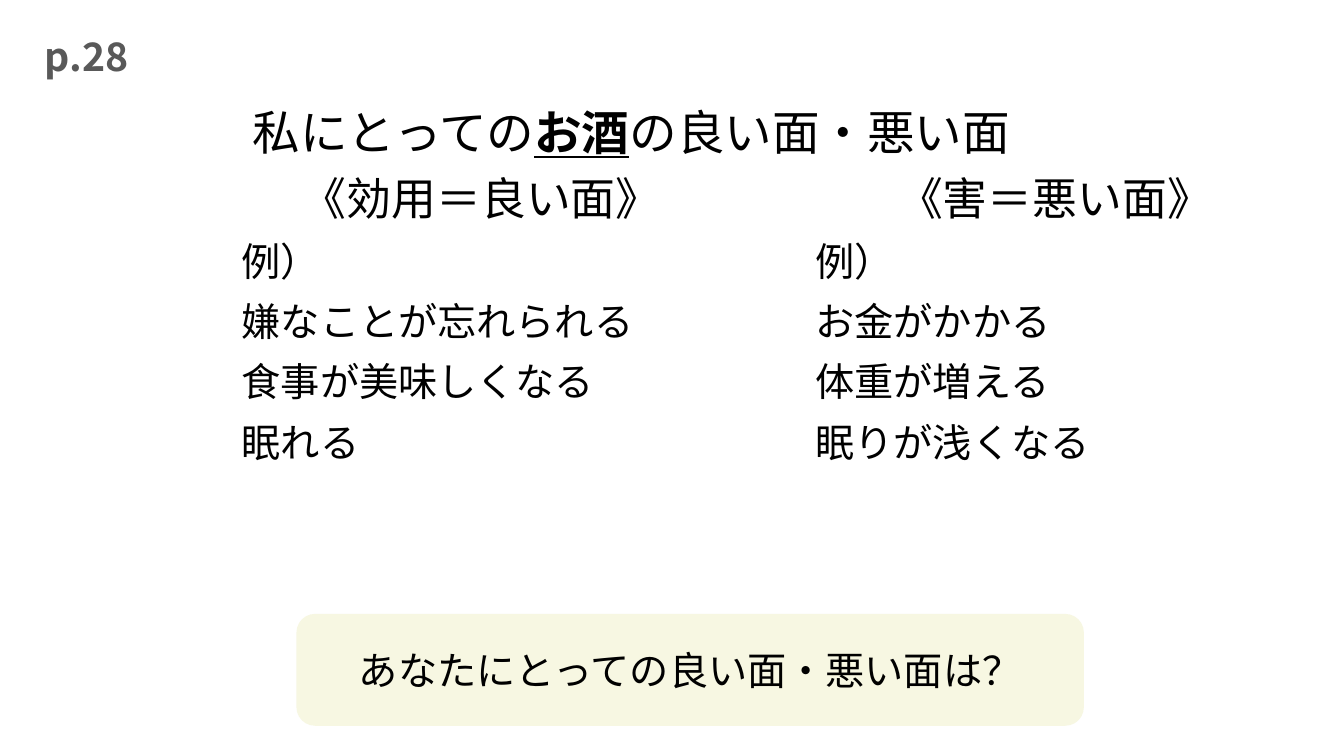
from pptx import Presentation
from pptx.dml.color import RGBColor
from pptx.enum.shapes import MSO_SHAPE
from pptx.enum.text import MSO_ANCHOR, PP_ALIGN
from pptx.oxml.ns import qn
from pptx.util import Inches, Pt

FONT = "Noto Sans CJK JP"
COLORS = {"text": "000000", "page": "595959", "panel": "FFFFFF", "question": "F7F7E2"}
COLUMNS = [
    ["《効用＝良い面》", "例）", "嫌なことが忘れられる", "食事が美味しくなる", "眠れる"],
    ["《害＝悪い面》", "例）", "お金がかかる", "体重が増える", "眠りが浅くなる"],
]
COLUMN_LEFT, COLUMN_TOP, COLUMN_WIDTH, COLUMN_HEIGHT, COLUMN_GAP = 2.25, 1.75, 5, 3.61, 0.69


def add_run(p, text, size, color="text", bold=False, underline=False):
    r = p.add_run()
    r.text = text
    font = r.font
    font.size, font.bold, font.underline, font.name = Pt(size), bold, underline, FONT
    font.color.rgb = RGBColor.from_string(COLORS[color])
    r._r.get_or_add_rPr().makeelement
    ea = r._r.get_or_add_rPr().makeelement(qn("a:ea"), {"typeface": FONT})
    r._r.get_or_add_rPr().append(ea)


def add_text_frame(s, box, anchor, preset=None, fill=None):
    area = [Inches(v) for v in box]
    if preset is None:
        sp = s.shapes.add_textbox(*area)
    else:
        sp = s.shapes.add_shape(preset, *area)
        sp.shadow.inherit = False
        sp.fill.solid()
        sp.fill.fore_color.rgb = RGBColor.from_string(COLORS[fill])
        sp.line.fill.background()
    tf = sp.text_frame
    tf.word_wrap = True
    tf.vertical_anchor = anchor
    return tf


def add_title(s, box):
    p = add_text_frame(s, box, MSO_ANCHOR.BOTTOM).paragraphs[0]
    p.line_spacing = 0.9
    add_run(p, "私にとっての", 34)
    add_run(p, "お酒", 34, bold=True, underline=True)
    add_run(p, "の良い面・悪い面", 34)


def add_column(s, box, lines):
    tf = add_text_frame(s, box, MSO_ANCHOR.TOP, MSO_SHAPE.RECTANGLE, "panel")
    for i, line in enumerate(lines):
        p = tf.add_paragraph() if i else tf.paragraphs[0]
        p.alignment = PP_ALIGN.LEFT if i else PP_ALIGN.CENTER
        p.line_spacing = 0.8
        p.space_before = Pt(16 if i else 0)
        p._p.get_or_add_pPr().set("marL", str(Inches(0.05)))
        add_run(p, line, 28 if i else 32)


def add_question(s, box):
    tf = add_text_frame(s, box, MSO_ANCHOR.MIDDLE, MSO_SHAPE.ROUNDED_RECTANGLE, "question")
    p = tf.paragraphs[0]
    p.alignment = PP_ALIGN.CENTER
    add_run(p, "あなたにとっての良い面・悪い面は？", 28)


def add_page_label(s, box):
    p = add_text_frame(s, box, MSO_ANCHOR.MIDDLE).paragraphs[0]
    p.alignment = PP_ALIGN.CENTER
    add_run(p, "p.28", 28, "page", bold=True)


def main():
    prs = Presentation()
    prs.slide_width, prs.slide_height = Inches(13.33), Inches(7.5)
    s = prs.slides.add_slide(prs.slide_layouts[6])
    add_title(s, (2.41, 0.33, 9.11, 1.31))
    for i, lines in enumerate(COLUMNS):
        left = COLUMN_LEFT + i * (COLUMN_WIDTH + COLUMN_GAP)
        add_column(s, (left, COLUMN_TOP, COLUMN_WIDTH, COLUMN_HEIGHT), lines)
    add_question(s, (2.94, 6.09, 7.81, 1.11))
    add_page_label(s, (0.13, 0.13, 1.46, 0.85))
    prs.save("out.pptx")


if __name__ == "__main__":
    main()
